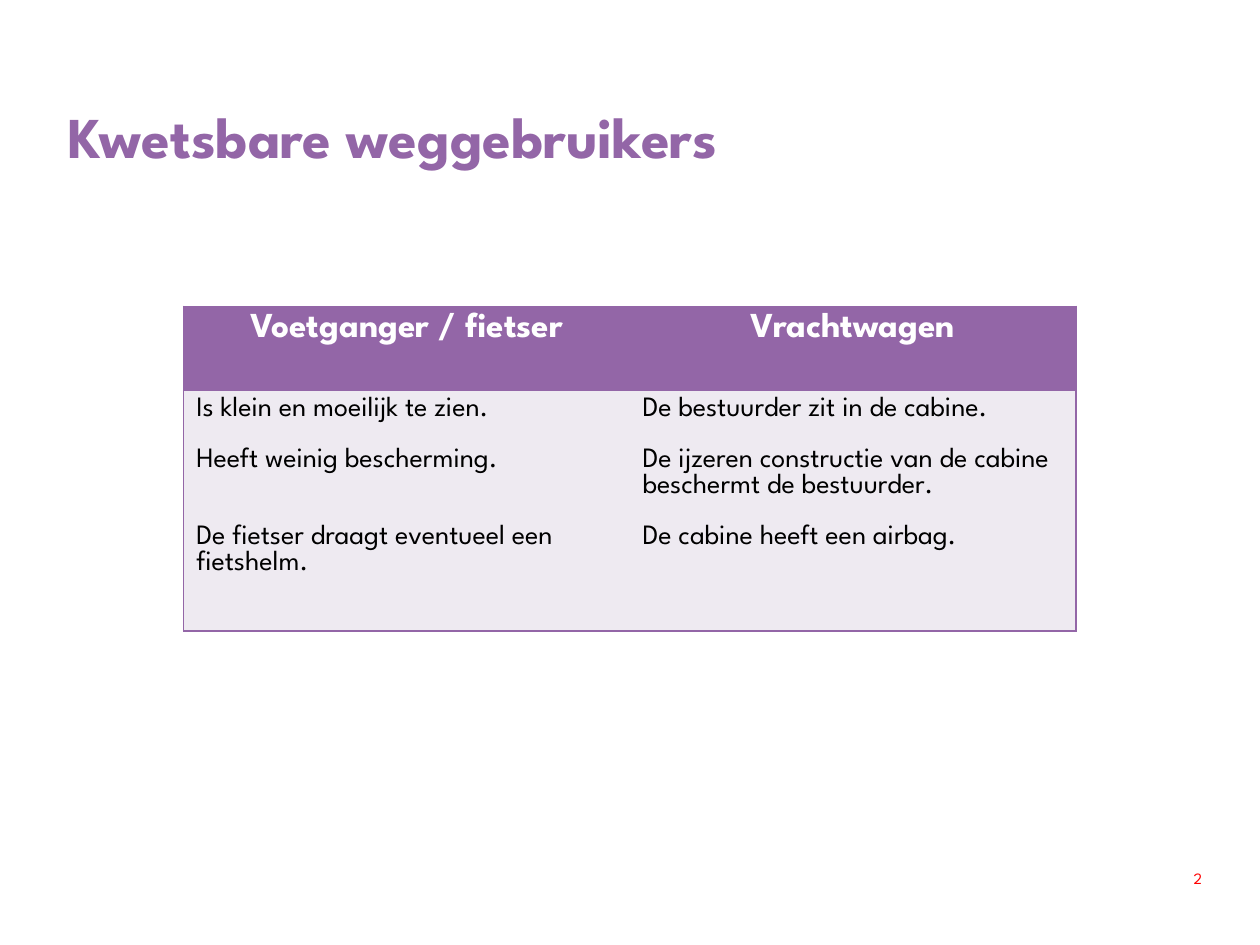
from pptx import Presentation
from pptx.dml.color import RGBColor as Rgb
from pptx.enum.text import MSO_ANCHOR as Anchor, PP_ALIGN as Align
from pptx.oxml.ns import qn
from pptx.util import Pt
from lxml.etree import Element, SubElement as Sub

FONT = "League Spartan"
PURPLE = Rgb(0x93, 0x66, 0xA7)
PALE = Rgb(0xEE, 0xEA, 0xF1)
WHITE = Rgb(0xFF, 0xFF, 0xFF)
BLACK = Rgb(0, 0, 0)
RED = Rgb(0xFF, 0, 0)

HEADS = ["Voetganger / fietser", "Vrachtwagen"]
POINTS = [
    [("Is klein en moeilijk te zien.", 0),
     ("Heeft weinig bescherming.", 14.7),
     ("De fietser draagt eventueel een fietshelm.", 29.4)],
    [("De bestuurder zit in de cabine.", 0),
     ("De ijzeren constructie van de cabine beschermt de bestuurder.", 14.7),
     ("De cabine heeft een airbag.", 14.7)],
]


def add_run(para, text, size, color, bold=False):
    """Add one styled run to a paragraph."""
    run = para.add_run()
    run.text = text
    font = run.font
    font.name, font.size, font.bold = FONT, Pt(size), bold
    font.color.rgb = color


def add_title(slide, text):
    """Place and fill the title."""
    title = slide.shapes.title
    title.left, title.top, title.width, title.height = Pt(32), Pt(32.5), Pt(656.5), Pt(95)
    title.text_frame.vertical_anchor = Anchor.MIDDLE
    para = title.text_frame.paragraphs[0]
    para.alignment, para.line_spacing = Align.LEFT, 0.9
    add_run(para, text, 33, PURPLE, True)


def add_number(slide, text):
    """Add the page number at the lower right."""
    frame = slide.shapes.add_textbox(Pt(566), Pt(493), Pt(128), Pt(18)).text_frame
    frame.word_wrap = True
    frame.vertical_anchor = Anchor.BOTTOM
    para = frame.paragraphs[0]
    para.alignment = Align.RIGHT
    add_run(para, text, 9, RED)


def set_edges(cell, shown):
    """Draw the named cell edges and hide the others."""
    props = cell._tc.get_or_add_tcPr()
    for spot, side in enumerate("LRTB"):
        line = Element(qn(f"a:ln{side}"), w=str(Pt(1)))
        if side in shown:
            fill = Sub(line, qn("a:solidFill"))
            Sub(fill, qn("a:srgbClr"), val=str(PURPLE))
        else:
            Sub(line, qn("a:noFill"))
        props.insert(spot, line)


def fill_cell(cell, items, back, size, color, align, bold, edges):
    """Fill a cell with spaced paragraphs."""
    cell.fill.solid()
    cell.fill.fore_color.rgb = back
    frame = cell.text_frame
    for spot, (text, gap) in enumerate(items):
        para = frame.add_paragraph() if spot else frame.paragraphs[0]
        para.alignment = align
        if gap:
            para.space_before = Pt(gap)
        add_run(para, text, size, color, bold)
    set_edges(cell, edges)


def add_grid(slide):
    """Add the table that compares the road users."""
    grid = slide.shapes.add_table(2, 2, Pt(105), Pt(175), Pt(510), Pt(185.7)).table
    grid.first_row = grid.horz_banding = False
    for row, height in zip(grid.rows, (48.2, 137.5)):
        row.height = Pt(height)
    for col, (head, items, side) in enumerate(zip(HEADS, POINTS, "LR")):
        grid.columns[col].width = Pt(255)
        edges = side + "TB"
        fill_cell(grid.cell(0, col), [(head, 0)], PURPLE, 20, WHITE, Align.CENTER, True, edges)
        fill_cell(grid.cell(1, col), items, PALE, 16, BLACK, Align.LEFT, False, edges)


def main():
    """Build and save the slide."""
    deck = Presentation()
    deck.slide_width, deck.slide_height = Pt(720), Pt(540)
    slide = deck.slides.add_slide(deck.slide_layouts[5])
    add_number(slide, "2")
    add_title(slide, "Kwetsbare weggebruikers")
    add_grid(slide)
    deck.save("out.pptx")


if __name__ == "__main__":
    main()
